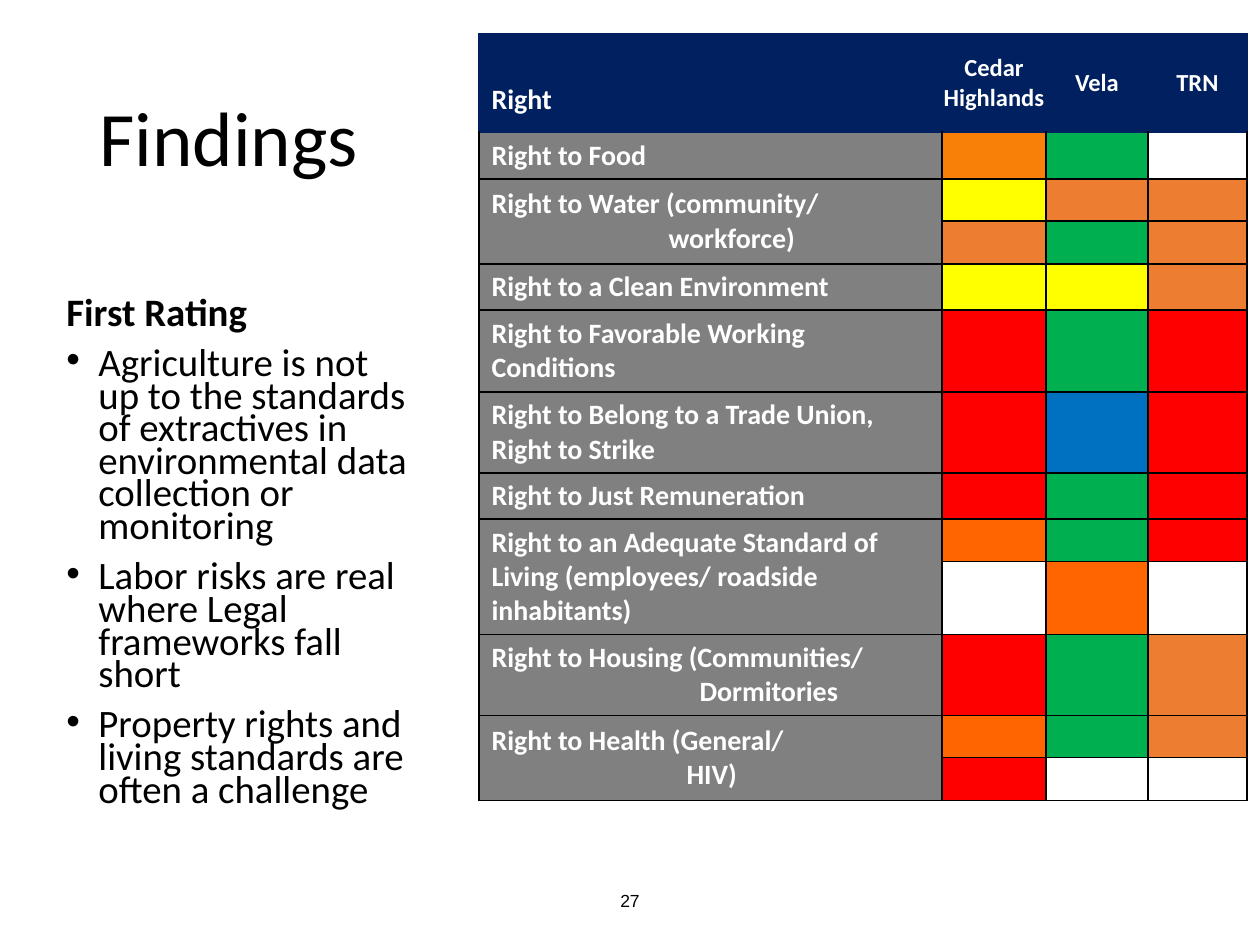
from lxml import etree
from pptx import Presentation
from pptx.dml.color import RGBColor as RGB
from pptx.enum.text import MSO_ANCHOR as Anchor, PP_ALIGN as Align
from pptx.oxml import parse_xml
from pptx.oxml.ns import nsdecls, qn
from pptx.util import Pt

BLACK = RGB(0, 0, 0)
WHITE = RGB(255, 255, 255)
NAVY = RGB(0x00, 0x20, 0x60)
GRAY = RGB(0x80, 0x80, 0x80)
AMBER = RGB(0xF8, 0x80, 0x08)
ORANGE = RGB(0xED, 0x7D, 0x31)
BRIGHT = RGB(0xFF, 0x66, 0x00)
YELLOW = RGB(0xFF, 0xFF, 0x00)
GREEN = RGB(0x00, 0xB0, 0x50)
RED = RGB(0xFF, 0x00, 0x00)
BLUE = RGB(0x00, 0x70, 0xC0)


def px(n):
    return round(n * 914400 / 126)


def write(para, text, size, color=BLACK, bold=False, name="Calibri", **form):
    for key, val in form.items():
        setattr(para, key, val)
    run = para.add_run()
    run.text = text
    look = {"size": Pt(size), "bold": bold, "name": name}
    for key, val in look.items():
        setattr(run.font, key, val)
    run.font.color.rgb = color


deck = Presentation()
deck.slide_width, deck.slide_height = px(1260), px(945)
slide = deck.slides.add_slide(deck.slide_layouts[6])

# Text boxes: page number, title, findings
frames = []
for box, anchor in [
    ((417, 876, 426, 50), Anchor.MIDDLE),
    ((87, 50, 1086, 183), Anchor.MIDDLE),
    ((54, 294, 370, 566), Anchor.TOP),
]:
    frame = slide.shapes.add_textbox(*map(px, box)).text_frame
    frame.word_wrap = True
    frame.vertical_anchor = anchor
    frames.append(frame)
page, title, body = frames
write(page.paragraphs[0], "27", 10, name="Arial", alignment=Align.CENTER)
write(title.paragraphs[0], "Findings", 44, line_spacing=0.9)
write(body.paragraphs[0], "First Rating", 22.2, bold=True, line_spacing=0.7)

for text in [
    "Agriculture is not up to the standards of extractives in "
    "environmental data collection or monitoring",
    "Labor risks are real where Legal frameworks fall short",
    "Property rights and living standards are often a challenge",
]:
    para = body.add_paragraph()
    props = para._p.get_or_add_pPr()
    props.set("marL", str(px(32)))
    props.set("indent", str(px(-32)))
    etree.SubElement(props, qn("a:buFont")).set("typeface", "Arial")
    etree.SubElement(props, qn("a:buChar")).set("char", "•")
    write(para, text, 22.2, line_spacing=0.7, space_before=Pt(10))

# Ratings: label lines, indent of the second line, colours of each table row
heads = ["Right", "Cedar Highlands", "Vela", "TRN"]
rights = [
    (["Right to Food"], 0, [(AMBER, GREEN, None)]),
    (["Right to Water (community/", "workforce)"], 177,
     [(YELLOW, ORANGE, ORANGE), (ORANGE, GREEN, ORANGE)]),
    (["Right to a Clean Environment"], 0, [(YELLOW, YELLOW, ORANGE)]),
    (["Right to Favorable Working Conditions"], 0, [(RED, GREEN, RED)]),
    (["Right to Belong to a Trade Union,", "Right to Strike"], 0,
     [(RED, BLUE, RED)]),
    (["Right to Just Remuneration"], 0, [(RED, GREEN, RED)]),
    (["Right to an Adequate Standard of Living (employees/ roadside "
      "inhabitants)"], 0, [(BRIGHT, GREEN, RED), (None, BRIGHT, None)]),
    (["Right to Housing (Communities/", "Dormitories"], 208,
     [(RED, GREEN, ORANGE)]),
    (["Right to Health (General/", "HIV)"], 195,
     [(BRIGHT, GREEN, ORANGE), (RED, None, None)]),
]

# Table grid
wide = [463, 104, 102, 99]
high = [98, 47, 42, 43, 46, 82, 81, 46, 43, 73, 81, 42, 43]
grid = slide.shapes.add_table(
    len(high), len(wide), px(479), px(34), px(sum(wide)), px(sum(high))).table
grid.first_row = grid.horz_banding = False
for col, size in zip(grid.columns, wide):
    col.width = px(size)
for row, size in zip(grid.rows, high):
    row.height = px(size)

# Header text
for num, text in enumerate(heads):
    cell = grid.cell(0, num)
    if num:
        cell.margin_left = cell.margin_right = 0
        write(cell.text_frame.paragraphs[0], text, 14, WHITE, True,
              alignment=Align.CENTER)
    else:
        cell.margin_top, cell.margin_bottom = px(39), px(5)
        write(cell.text_frame.paragraphs[0], text, 16, WHITE, True)

# Labels and rating colours
fills = [[NAVY] * 4]
for lines, indent, marks in rights:
    top = len(fills)
    cell = grid.cell(top, 0)
    if len(marks) > 1:
        cell.merge(grid.cell(top + len(marks) - 1, 0))
    cell.margin_top = cell.margin_bottom = px(5)
    for num, line in enumerate(lines):
        frame = cell.text_frame
        para = frame.add_paragraph() if num else frame.paragraphs[0]
        if num and indent:
            para._p.get_or_add_pPr().set("marL", str(px(indent)))
        write(para, line, 16, WHITE, True)
    fills += [[GRAY, *mark] for mark in marks]

# Fills and borders
for r, colors in enumerate(fills):
    for c, color in enumerate(colors):
        cell = grid.cell(r, c)
        cell.vertical_anchor = Anchor.MIDDLE
        if r and c:
            cell.margin_top = cell.margin_bottom = 0
        if color is None:
            cell.fill.background()
        else:
            cell.fill.solid()
            cell.fill.fore_color.rgb = color
        for spot, side in enumerate("LRTB"):
            edge = NAVY if r == 0 or (r == 1 and side == "T") else BLACK
            cell._tc.get_or_add_tcPr().insert(spot, parse_xml(
                f'<a:ln{side} {nsdecls("a")} w="12700"><a:solidFill>'
                f'<a:srgbClr val="{edge}"/></a:solidFill></a:ln{side}>'))

deck.save("out.pptx")
